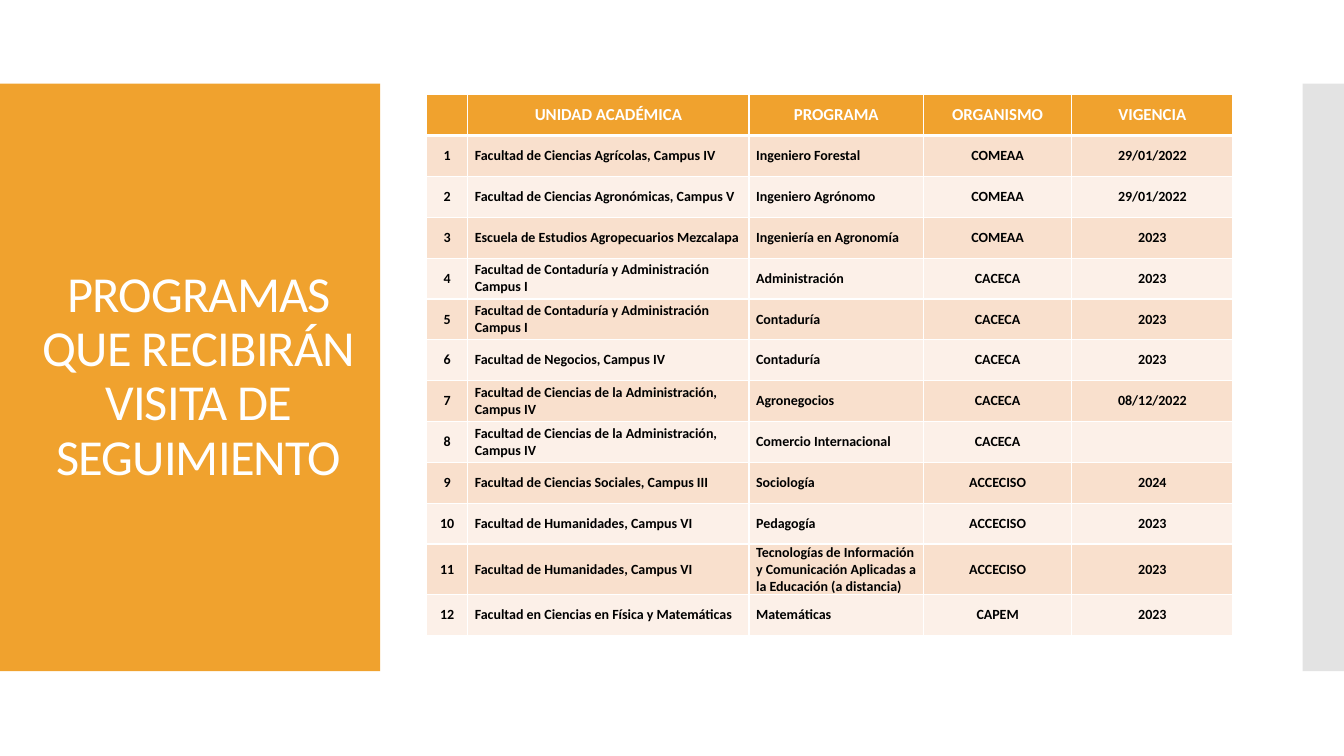
import pptx
import pptx.dml.color
import pptx.enum.shapes
import pptx.enum.text
import pptx.oxml.ns
import pptx.util
from lxml import etree

ALIGN = pptx.enum.text.PP_ALIGN
MIDDLE = pptx.enum.text.MSO_ANCHOR.MIDDLE
FONT = "Calibri"
COLORS = {"accent": "F0A22E", "side": "C8C8C8", "odd": "F9E0CD",
          "even": "FCF0E8", "white": "FFFFFF", "text": "000000"}

TITLE = "PROGRAMAS QUE RECIBIRÁN VISITA DE SEGUIMIENTO"
COL_WIDTHS = (0.41, 2.79, 1.73, 1.47, 1.6)
HEADERS = ("", "UNIDAD ACADÉMICA", "PROGRAMA", "ORGANISMO", "VIGENCIA")
PROGRAMS = (
    ("Facultad de Ciencias Agrícolas, Campus IV", "Ingeniero Forestal", "COMEAA", "29/01/2022"),
    ("Facultad de Ciencias Agronómicas, Campus V", "Ingeniero Agrónomo", "COMEAA", "29/01/2022"),
    ("Escuela de Estudios Agropecuarios Mezcalapa", "Ingeniería en Agronomía", "COMEAA", "2023"),
    ("Facultad de Contaduría y Administración Campus I", "Administración", "CACECA", "2023"),
    ("Facultad de Contaduría y Administración Campus I", "Contaduría", "CACECA", "2023"),
    ("Facultad de Negocios, Campus IV", "Contaduría", "CACECA", "2023"),
    ("Facultad de Ciencias de la Administración, Campus IV", "Agronegocios", "CACECA", "08/12/2022"),
    ("Facultad de Ciencias de la Administración, Campus IV", "Comercio Internacional", "CACECA", ""),
    ("Facultad de Ciencias Sociales, Campus III", "Sociología", "ACCECISO", "2024"),
    ("Facultad de Humanidades, Campus VI", "Pedagogía", "ACCECISO", "2023"),
    ("Facultad de Humanidades, Campus VI",
     "Tecnologías de Información y Comunicación Aplicadas a la Educación (a distancia)",
     "ACCECISO", "2023"),
    ("Facultad en Ciencias en Física y Matemáticas", "Matemáticas", "CAPEM", "2023"),
)


def rgb(name):
    return pptx.dml.color.RGBColor.from_string(COLORS[name])


def inches(*lengths):
    return [pptx.util.Inches(n) for n in lengths]


def set_font(p, size, color, bold=False):
    p.font.name = FONT
    p.font.size = pptx.util.Pt(size)
    p.font.bold = bold
    p.font.color.rgb = rgb(color)


def add_band(slide, box, color, opacity=1):
    sp = slide.shapes.add_shape(pptx.enum.shapes.MSO_SHAPE.RECTANGLE, *inches(*box))
    sp.shadow.inherit = False
    sp.fill.solid()
    sp.fill.fore_color.rgb = rgb(color)
    sp.line.fill.background()
    if opacity < 1:
        srgb = sp._element.spPr.find(".//" + pptx.oxml.ns.qn("a:srgbClr"))
        etree.SubElement(srgb, pptx.oxml.ns.qn("a:alpha"), val=str(int(opacity * 100000)))


def add_title_panel(slide, box):
    """Fill the box with the accent colour and centre the title inside it."""
    left, top, width, height = box
    add_band(slide, box, "accent")
    sp = slide.shapes.add_textbox(*inches(left + 0.28, top + 0.4, width - 0.39, height - 0.8))
    tf = sp.text_frame
    tf.word_wrap = True
    tf.vertical_anchor = MIDDLE
    p = tf.paragraphs[0]
    p.alignment = ALIGN.CENTER
    p.line_spacing = 0.9
    set_font(p, 36, "white")
    r = p.add_run()
    r.text = TITLE
    r._r.get_or_add_rPr().set("spc", "-60")


def set_borders(cell, bottom):
    """Draw white 1 pt borders, with the given bottom width in points."""
    qn = pptx.oxml.ns.qn
    tc_pr = cell._tc.get_or_add_tcPr()
    for i, (side, width) in enumerate((("L", 1), ("R", 1), ("T", 1), ("B", bottom))):
        ln = etree.Element(qn("a:ln" + side), w=str(pptx.util.Pt(width)))
        fill = etree.SubElement(ln, qn("a:solidFill"))
        etree.SubElement(fill, qn("a:srgbClr"), val=COLORS["white"])
        tc_pr.insert(i, ln)


def fill_cell(cell, text, row, col):
    header = row == 0
    cell.fill.solid()
    cell.fill.fore_color.rgb = rgb("accent" if header else "odd" if row % 2 else "even")
    set_borders(cell, 3 if header else 1)
    cell.vertical_anchor = MIDDLE
    if not header and col:
        cell.margin_left = cell.margin_right = pptx.util.Inches(0.07)
        cell.margin_top = cell.margin_bottom = 0
    p = cell.text_frame.paragraphs[0]
    p.alignment = ALIGN.LEFT if not header and col in (1, 2) else ALIGN.CENTER
    set_font(p, 12 if header else 10, "white" if header else "text", bold=True)
    if text:
        p.add_run().text = text


def add_program_table(slide, box):
    rows = [HEADERS] + [(str(n), *program) for n, program in enumerate(PROGRAMS, 1)]
    table = slide.shapes.add_table(len(rows), len(HEADERS), *inches(*box)).table
    for column, width in zip(table.columns, COL_WIDTHS):
        column.width = pptx.util.Inches(box[2] * width / sum(COL_WIDTHS))
    for i, values in enumerate(rows):
        for j, text in enumerate(values):
            fill_cell(table.cell(i, j), text, i, j)


def main():
    prs = pptx.Presentation()
    prs.slide_width, prs.slide_height = inches(13.33, 7.5)
    slide = prs.slides.add_slide(prs.slide_layouts[6])
    add_title_panel(slide, (0, 0.83, 3.77, 5.83))
    add_band(slide, (12.92, 0.83, 0.41, 5.83), "side", opacity=0.5)
    add_program_table(slide, (4.23, 0.94, 8, 5.27))
    prs.save("out.pptx")


if __name__ == "__main__":
    main()
